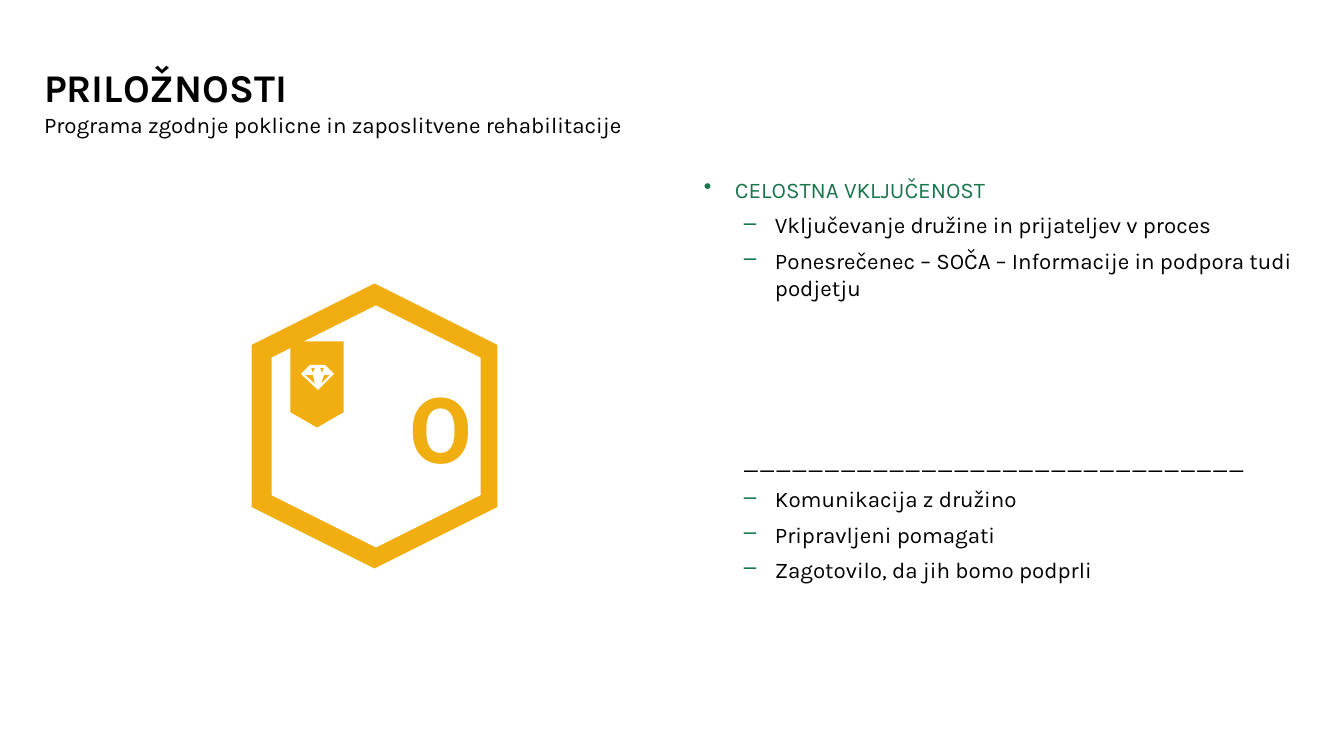
import lxml.etree
import pptx
import pptx.dml.color
import pptx.enum.shapes
import pptx.enum.text
import pptx.oxml.ns
import pptx.util

PX = 914400 / 100.8
THEME = {
    "black": "000000", "white": "FFFFFF", "green": "19764C", "gold": "F1AE10",
    "font": "Karla", "sign": "Roboto", "title": 28, "text": 16, "big": 65,
}
KIND = pptx.enum.shapes.MSO_SHAPE


def px(*sizes):
    return [pptx.util.Emu(round(size * PX)) for size in sizes]


def style(para, size, color, bold=False, font="font"):
    """Format every run of a paragraph from the theme."""
    for run in para.runs:
        run.font.name = THEME[font]
        run.font.size = pptx.util.Pt(THEME[size])
        run.font.bold = bold
        run.font.color.rgb = pptx.dml.color.RGBColor.from_string(THEME[color])


deck = pptx.Presentation()
deck.slide_width, deck.slide_height = px(1344, 756)
slide = deck.slides.add_slide(deck.slide_layouts[6])

# Text boxes: title, subtitle, list
frames = []
for place in [(44, 56, 1151, 55), (44, 114, 1151, 51), (704, 179, 596, 492)]:
    frame = slide.shapes.add_textbox(*px(*place)).text_frame
    frame.word_wrap = True
    frame.margin_left = frame.margin_right = 0
    frame.margin_top = frame.margin_bottom = 0
    frames.append(frame)
title, subtitle, body = frames

title.vertical_anchor = pptx.enum.text.MSO_ANCHOR.BOTTOM
title.text = "PRILOŽNOSTI"
subtitle.text = "Programa zgodnje poklicne in zaposlitvene rehabilitacije"
for frame, size, bold in [(title, "title", True), (subtitle, "text", False)]:
    frame.paragraphs[0].line_spacing = 0.9
    style(frame.paragraphs[0], size, "black", bold)

# List: text, bullet, left edge of text, space before
items = [
    ("CELOSTNA VKLJUČENOST", "•", 31, 0),
    ("Vključevanje družine in prijateljev v proces", "–", 71, 6),
    ("Ponesrečenec – SOČA – Informacije in podpora tudi podjetju", "–", 71, 6),
    ("_______________________________", "", 39, 106.8),
    ("Komunikacija z družino", "–", 71, 6),
    ("Pripravljeni pomagati", "–", 71, 6),
    ("Zagotovilo, da jih bomo podprli", "–", 71, 6),
]
body.text = "\n".join(item[0] for item in items)
for para, (text, mark, left, gap) in zip(body.paragraphs, items):
    head = mark == "•"
    para.level = 0 if head else 1
    para.line_spacing = 0.9 if head else pptx.util.Pt(19.2)
    para.space_before = pptx.util.Pt(gap)
    props = para._p.get_or_add_pPr()
    edge, hang = px(left, -31 if mark else 0)
    props.set("marL", str(edge))
    props.set("indent", str(hang))
    if mark:
        tint = lxml.etree.SubElement(props, pptx.oxml.ns.qn("a:buClr"))
        lxml.etree.SubElement(tint, pptx.oxml.ns.qn("a:srgbClr"), val=THEME["green"])
        lxml.etree.SubElement(props, pptx.oxml.ns.qn("a:buChar"), char=mark)
    style(para, "text", "green" if head else "black")

# Badge: hexagon ring, tag, letter and gem
badge = slide.shapes.add_group_shape().shapes
parts = []
for kind, place, color in [
    (KIND.HEXAGON, (232, 303, 285, 246), "gold"),
    (KIND.HEXAGON, (255, 322, 242, 209), "white"),
    (KIND.PENTAGON, (274, 358, 86, 53), "gold"),
]:
    part = badge.add_shape(kind, *px(*place))
    part.rotation = 90
    parts.append((part, color))
part.adjustments[0] = 0.287

letter = badge.add_textbox(*px(400, 368, 66, 120)).text_frame
letter.word_wrap = True
letter.auto_size = pptx.enum.text.MSO_AUTO_SIZE.SHAPE_TO_FIT_TEXT
letter.text = "O"
letter.paragraphs[0].alignment = pptx.enum.text.PP_ALIGN.CENTER
style(letter.paragraphs[0], "big", "gold", True, "sign")

rim = [(301, 374), (310, 365), (325, 365), (334, 374), (318, 390)]
facets = [
    [(305, 375), (313, 375), (315, 384)],
    [(313, 373), (311, 368), (315, 368)],
    [(324, 368), (322, 373), (320, 368)],
    [(321, 384), (324, 375), (330, 375)],
]
gem = badge.build_freeform(*rim[0], scale=PX)
gem.add_line_segments(rim[1:], close=True)
for facet in facets:
    gem.move_to(*facet[0])
    gem.add_line_segments(facet[1:], close=True)
parts.append((gem.convert_to_shape(), "white"))

for part, color in parts:
    part.shadow.inherit = False
    part.fill.solid()
    part.fill.fore_color.rgb = pptx.dml.color.RGBColor.from_string(THEME[color])
    part.line.fill.background()

deck.save("out.pptx")
